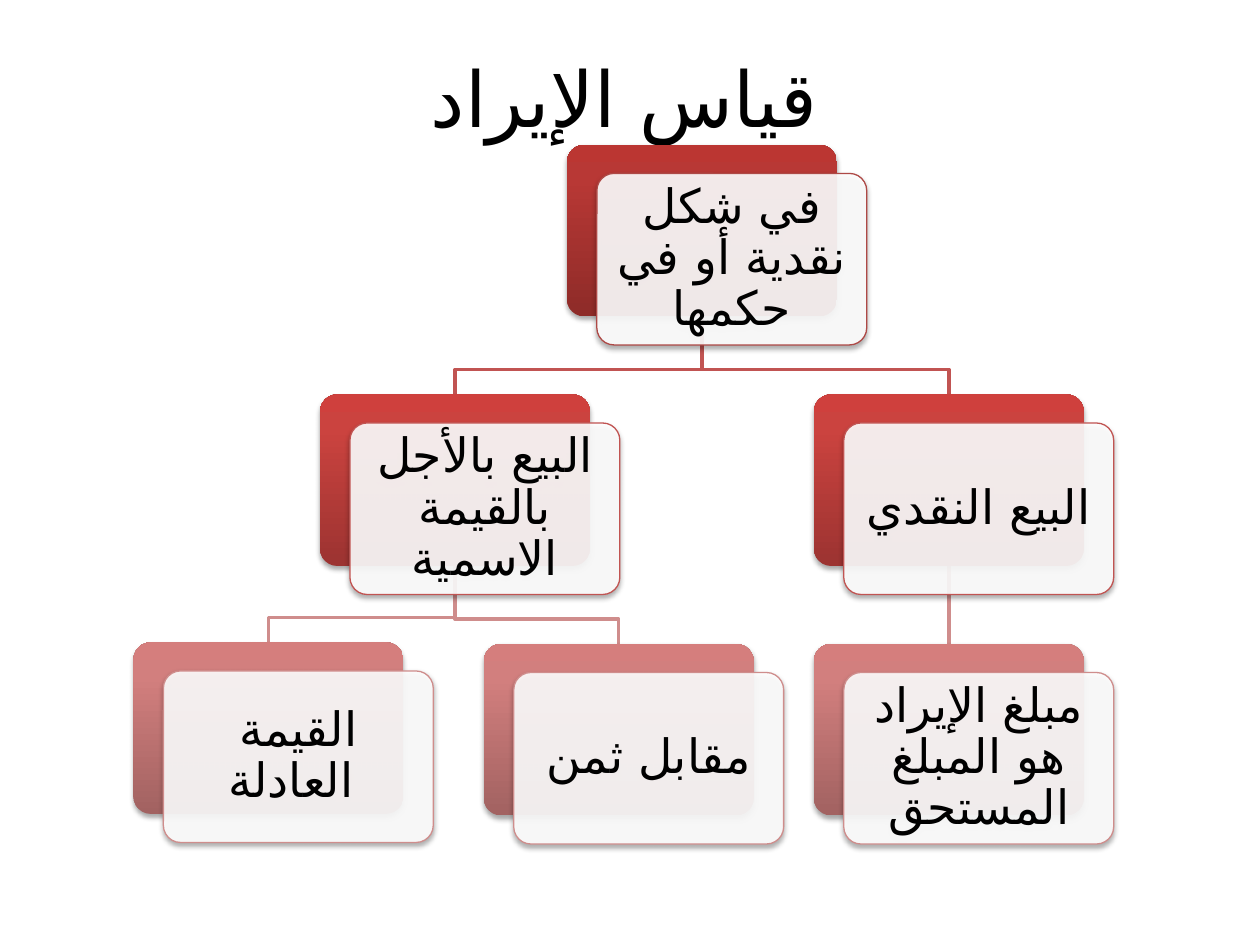
from copy import deepcopy
from dataclasses import dataclass

from lxml import etree
from pptx import Presentation
from pptx.dml.color import RGBColor
from pptx.enum.shapes import MSO_CONNECTOR, MSO_SHAPE
from pptx.enum.text import MSO_ANCHOR, PP_ALIGN
from pptx.oxml.ns import qn
from pptx.util import Pt

ROUNDED = MSO_SHAPE.ROUNDED_RECTANGLE
STRAIGHT = MSO_CONNECTOR.STRAIGHT
MIDDLE = MSO_ANCHOR.MIDDLE
CENTER = PP_ALIGN.CENTER

LATIN_FONT, ARABIC_FONT = "Calibri", "DejaVu Sans"
CARD_WIDTH, CARD_HEIGHT = 154.2, 98
SHIFT_X, SHIFT_Y = 17.1, 16.3
BEND_RISE = 14.2
STOP_POSITIONS = (0, 0.8, 1)


@dataclass(frozen=True)
class Level:
    """Colours shared by the cards of one tier."""

    outline: str
    gradient: tuple[str, str, str]


@dataclass(frozen=True)
class Node:
    """A card of the tree with the top left corner of its back plate."""

    text: str
    left: float
    top: float
    level: Level

    @property
    def center(self) -> float:
        """Return the horizontal middle of the back plate."""
        return self.left + CARD_WIDTH / 2

    @property
    def bottom(self) -> float:
        """Return the lower edge of the back plate."""
        return self.top + CARD_HEIGHT


ROOT_LEVEL = Level("AE4946", ("8E2B28", "B83835", "BB3632"))
SALE_LEVEL = Level("C15452", ("9C3331", "CB433F", "CF403D"))
VALUE_LEVEL = Level("CF8D8C", ("A26261", "D27F7E", "D57E7D"))

ROOT = Node("في شكل نقدية أو في حكمها", 324, 82.8, ROOT_LEVEL)
CREDIT = Node("البيع بالأجل بالقيمة الاسمية", 182.9, 225.4, SALE_LEVEL)
FAIR_VALUE = Node("القيمة العادلة ", 76.3, 367.1, VALUE_LEVEL)
PRICE = Node("مقابل ثمن", 276.5, 368, VALUE_LEVEL)
CASH = Node("البيع النقدي", 465.1, 225.4, SALE_LEVEL)
AMOUNT = Node("مبلغ الإيراد هو المبلغ المستحق", 465.1, 368, VALUE_LEVEL)

NODES = (ROOT, CREDIT, FAIR_VALUE, PRICE, CASH, AMOUNT)
LINKS = ((CASH, AMOUNT), (ROOT, CASH), (CREDIT, PRICE), (CREDIT, FAIR_VALUE), (ROOT, CREDIT))


def color(value: str) -> RGBColor:
    """Turn a hex string into a colour."""
    return RGBColor.from_string(value)


def apply_format(target, values: dict) -> None:
    """Set every named attribute on the target."""
    for name, value in values.items():
        setattr(target, name, value)


def write_text(shape, text: str, size: float, margin: float, spacing: float) -> None:
    """Write one centred paragraph of Arabic text."""
    frame = shape.text_frame
    sides = ("margin_left", "margin_top", "margin_right", "margin_bottom")
    apply_format(frame, {"word_wrap": True, "vertical_anchor": MIDDLE} | dict.fromkeys(sides, Pt(margin)))
    para = frame.paragraphs[0]
    apply_format(para, {"alignment": CENTER, "line_spacing": spacing})
    span = para.add_run()
    span.text = text
    apply_format(span.font, {"name": LATIN_FONT, "size": Pt(size)})
    span.font.color.rgb = color("000000")
    properties = span._r.get_or_add_rPr()
    properties.set("lang", "ar-EG")
    etree.SubElement(properties, qn("a:cs"), typeface=ARABIC_FONT)


def draw_link(page, parent: Node, child: Node) -> None:
    """Join a parent to a child with a straight or bent line."""
    start = (Pt(parent.center), Pt(parent.bottom))
    end = (Pt(child.center), Pt(child.top))
    if parent.center == child.center:
        link = page.shapes.add_connector(STRAIGHT, *start, *end)
        etree.SubElement(link._element.spPr, qn("a:effectLst"))
    else:
        bend = Pt(child.top - BEND_RISE)
        builder = page.shapes.build_freeform(*start)
        builder.add_line_segments([(start[0], bend), (end[0], bend), end], close=False)
        link = builder.convert_to_shape()
        link.fill.background()
        link.shadow.inherit = False
    link.line.color.rgb = color(child.level.outline)
    link.line.width = Pt(2)


def add_plate(page, left: float, top: float):
    """Add a rounded plate with a soft shadow below it."""
    plate = page.shapes.add_shape(ROUNDED, Pt(left), Pt(top), Pt(CARD_WIDTH), Pt(CARD_HEIGHT))
    plate.adjustments[0] = 0.1
    plate.shadow.inherit = False
    effects = plate._element.spPr.find(qn("a:effectLst"))
    settings = {"blurRad": str(Pt(3.1)), "dist": str(Pt(1.8)), "dir": "5400000", "rotWithShape": "0"}
    shadow = etree.SubElement(effects, qn("a:outerShdw"), settings)
    tint = etree.SubElement(shadow, qn("a:srgbClr"), val="000000")
    etree.SubElement(tint, qn("a:alpha"), val="35000")
    return plate


def fill_gradient(plate, colors: tuple[str, str, str]) -> None:
    """Fill a plate with a gradient that rises from its lower edge."""
    plate.fill.gradient()
    plate.fill.gradient_angle = 90
    stops = plate._element.spPr.find(f".//{qn('a:gsLst')}")
    stops.append(deepcopy(stops[-1]))
    for stop, position, value in zip(plate.fill.gradient_stops, STOP_POSITIONS, colors):
        stop.position = position
        stop.color.rgb = color(value)


def draw_node(page, node: Node) -> None:
    """Draw the back plate and the translucent card with its text."""
    back = add_plate(page, node.left, node.top)
    fill_gradient(back, node.level.gradient)
    back.line.fill.background()
    card = add_plate(page, node.left + SHIFT_X, node.top + SHIFT_Y)
    card.fill.solid()
    card.fill.fore_color.rgb = color("FFFFFF")
    white = card._element.spPr.find(f"{qn('a:solidFill')}/{qn('a:srgbClr')}")
    etree.SubElement(white, qn("a:alpha"), val="90000")
    card.line.color.rgb = color(node.level.outline)
    card.line.width = Pt(0.75)
    write_text(card, node.text, 27, 5, 0.9)


def main() -> None:
    """Build the deck and save it."""
    deck = Presentation()
    apply_format(deck, {"slide_width": Pt(720), "slide_height": Pt(540)})
    page = deck.slides.add_slide(deck.slide_layouts[6])
    title = page.shapes.add_textbox(Pt(36), Pt(21.6), Pt(641.5), Pt(67))
    write_text(title, "قياس الإيراد", 44, 3.6, 1.0)
    for parent, child in LINKS:
        draw_link(page, parent, child)
    for node in NODES:
        draw_node(page, node)
    deck.save("out.pptx")


if __name__ == "__main__":
    main()
